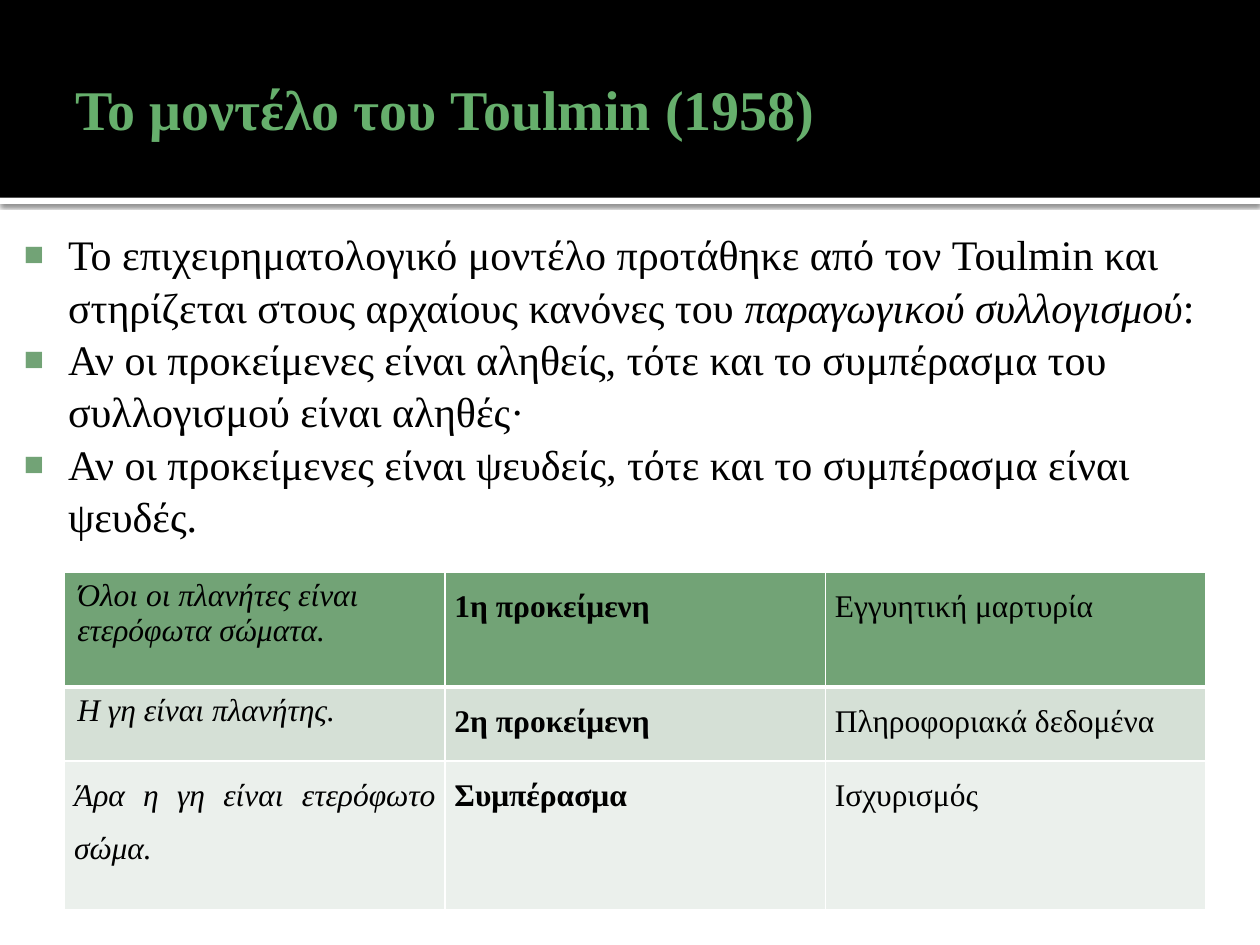
"""Build a slide on the Toulmin model with a bullet list and a syllogism table."""
from dataclasses import dataclass

from pptx import Presentation
from pptx.dml.color import RGBColor
from pptx.enum import shapes, text
from pptx.oxml import parse_xml
from pptx.oxml import ns
from pptx.util import Pt

FONT = "Times New Roman"
BLACK = RGBColor(0x00, 0x00, 0x00)
WHITE = RGBColor(0xFF, 0xFF, 0xFF)
TITLE_GREEN = RGBColor(0x66, 0xAF, 0x6C)
GREEN = RGBColor(0x72, 0xA3, 0x76)
PALE_GREEN = RGBColor(0xD5, 0xE0, 0xD6)
FAINT_GREEN = RGBColor(0xEB, 0xF0, 0xEC)
NAMESPACE = ns.nsdecls("a")


@dataclass
class Span:
    text: str
    italic: bool = False


@dataclass
class Row:
    texts: tuple[str, str, str]
    height: float
    fill: RGBColor
    top_line: float
    bottom_line: float
    loose_start: bool = False


BULLETS = [
    [
        Span("Το επιχειρηματολογικό μοντέλο προτάθηκε από τον Toulmin και "
             "στηρίζεται στους αρχαίους κανόνες του "),
        Span("παραγωγικού συλλογισμού", italic=True),
        Span(":"),
    ],
    [Span("Αν οι προκείμενες είναι αληθείς, τότε και το συμπέρασμα του "
          "συλλογισμού είναι αληθές·")],
    [Span("Αν οι προκείμενες είναι ψευδείς, τότε και το συμπέρασμα είναι ψευδές.")],
]

ROWS = [
    Row(("Όλοι οι πλανήτες είναι ετερόφωτα σώματα.", "1η προκείμενη",
         "Εγγυητική μαρτυρία"), 65.5, GREEN, 1, 3),
    Row(("Η γη είναι πλανήτης.", "2η προκείμενη",
         "Πληροφοριακά δεδομένα"), 42.5, PALE_GREEN, 3, 1),
    Row(("Άρα η γη είναι ετερόφωτο σώμα.", "Συμπέρασμα",
         "Ισχυρισμός"), 85, FAINT_GREEN, 1, 1, loose_start=True),
]


def format_font(font, size: float, color: RGBColor, bold=False, italic=False) -> None:
    font.name, font.size = FONT, Pt(size)
    font.bold, font.italic = bold, italic
    font.color.rgb = color


def place(box, left: float, top: float, width: float, height: float) -> None:
    box.left, box.top, box.width, box.height = map(Pt, (left, top, width, height))


def set_margins(target, left: float, top: float, right: float, bottom: float) -> None:
    target.margin_left, target.margin_top = Pt(left), Pt(top)
    target.margin_right, target.margin_bottom = Pt(right), Pt(bottom)


def add_band(page, top: float, height: float, color: RGBColor):
    band = page.shapes.add_shape(
        shapes.MSO_SHAPE.RECTANGLE, 0, Pt(top), Pt(720), Pt(height))
    band.shadow.inherit = False
    band.fill.solid()
    band.fill.fore_color.rgb = color
    band.line.fill.background()
    return band


def add_shadow(band) -> None:
    effects = band.element.spPr.find(ns.qn("a:effectLst"))
    effects.append(parse_xml(
        f'<a:outerShdw {NAMESPACE} blurRad="{Pt(2.5)}" dist="{Pt(0.8)}" dir="5400000" '
        f'algn="tl" rotWithShape="0"><a:srgbClr val="{BLACK}"><a:alpha val="60000"/>'
        '</a:srgbClr></a:outerShdw>'))


def fill_title(box) -> None:
    place(box, 36, 12.24, 648, 98.64)
    frame = box.text_frame
    frame.text = "Το μοντέλο του Toulmin (1958)"
    frame.auto_size = text.MSO_AUTO_SIZE.NONE
    frame.vertical_anchor = text.MSO_ANCHOR.MIDDLE
    set_margins(frame, 7.2, 3.6, 3.6, 3.6)
    para = frame.paragraphs[0]
    para.alignment = text.PP_ALIGN.LEFT
    format_font(para.runs[0].font, 32, TITLE_GREEN, bold=True)


def add_bullet(para) -> None:
    properties = para._p.get_or_add_pPr()
    properties.set("marL", str(Pt(34.56)))
    properties.set("indent", str(Pt(-25.2)))
    for markup in (
        f'<a:buClr {NAMESPACE}><a:srgbClr val="{GREEN}"/></a:buClr>',
        f'<a:buSzPct {NAMESPACE} val="80000"/>',
        f'<a:buChar {NAMESPACE} char="■"/>',
    ):
        properties.append(parse_xml(markup))


def fill_body(box) -> None:
    place(box, 0, 122.4, 720, 417.6)
    frame = box.text_frame
    frame.auto_size = text.MSO_AUTO_SIZE.NONE
    frame.vertical_anchor = text.MSO_ANCHOR.TOP
    set_margins(frame, 4.32, 7.2, 7.2, 3.6)
    for index, spans in enumerate(BULLETS):
        para = frame.add_paragraph() if index else frame.paragraphs[0]
        para.space_before = Pt(0)
        para.line_spacing = 1.04
        add_bullet(para)
        for span in spans:
            run = para.add_run()
            run.text = span.text
            format_font(run.font, 24, BLACK, italic=span.italic)


def set_borders(cell, top: float, bottom: float) -> None:
    properties = cell._tc.get_or_add_tcPr()
    sides = (("lnL", 1), ("lnR", 1), ("lnT", top), ("lnB", bottom))
    for index, (tag, width) in enumerate(sides):
        properties.insert(index, parse_xml(
            f'<a:{tag} {NAMESPACE} w="{Pt(width)}"><a:solidFill>'
            f'<a:srgbClr val="{WHITE}"/></a:solidFill></a:{tag}>'))


def fill_cell(cell, row: Row, column: int) -> None:
    cell.text_frame.text = row.texts[column]
    para = cell.text_frame.paragraphs[0]
    if column or row.loose_start:
        set_margins(cell, 5.4, 0, 5.4, 0)
        para.alignment = text.PP_ALIGN.JUSTIFY
        para.line_spacing = 1.5
    else:
        set_margins(cell, 7.2, 3.6, 7.2, 3.6)
    format_font(para.runs[0].font, 18, BLACK, bold=column == 1, italic=column == 0)
    cell.fill.solid()
    cell.fill.fore_color.rgb = row.fill
    set_borders(cell, row.top_line, row.bottom_line)


def add_syllogism_table(page) -> None:
    table = page.shapes.add_table(
        len(ROWS), 3, Pt(37), Pt(327), Pt(652), Pt(sum(row.height for row in ROWS))).table
    for index, row in enumerate(ROWS):
        table.rows[index].height = Pt(row.height)
        for column in range(3):
            fill_cell(table.cell(index, column), row, column)


def main() -> None:
    deck = Presentation()
    deck.slide_width, deck.slide_height = Pt(720), Pt(540)
    page = deck.slides.add_slide(deck.slide_layouts[1])
    page.background.fill.solid()
    page.background.fill.fore_color.rgb = WHITE
    title, body = page.placeholders
    add_shadow(add_band(page, 113, 3.6, WHITE))
    add_band(page, 0, 113, BLACK)
    for box in (title, body):
        page.shapes.element.append(box.element)
    fill_title(title)
    fill_body(body)
    add_syllogism_table(page)
    deck.save("out.pptx")


if __name__ == "__main__":
    main()
